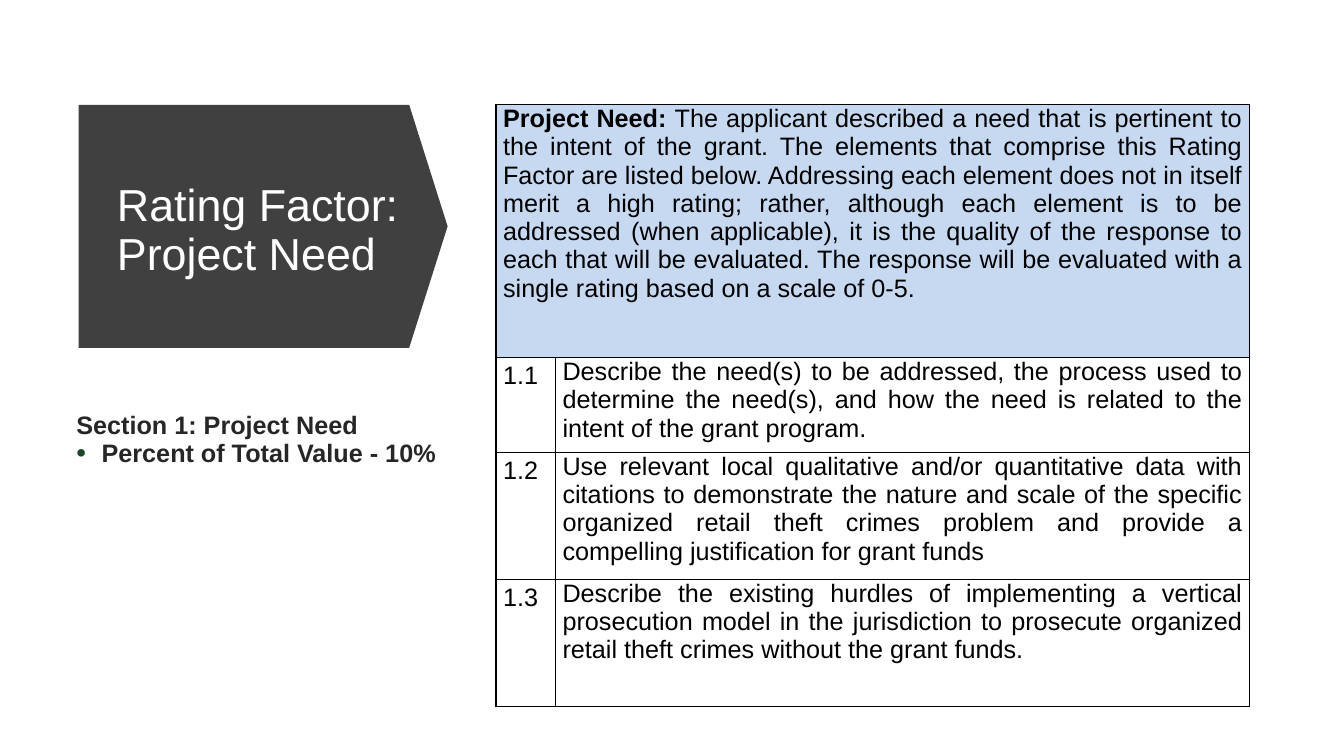
from dataclasses import dataclass

from lxml.etree import SubElement
from pptx import Presentation
from pptx.dml.color import RGBColor
from pptx.enum.shapes import MSO_SHAPE
from pptx.enum.text import MSO_ANCHOR, MSO_AUTO_SIZE, PP_ALIGN
from pptx.oxml.ns import qn
from pptx.util import Inches, Pt


@dataclass(frozen=True)
class Theme:
    font: str = "Arial"
    heading_size: int = 32
    body_size: int = 18
    banner: str = "404040"
    heading: str = "FFFFFF"
    section: str = "262626"
    bullet: str = "1F442A"
    intro_fill: str = "C6D9F1"
    ink: str = "000000"
    border_width: int = 1


THEME = Theme()

INTRO = [
    ("Project Need: ", True),
    ("The applicant described a need that is pertinent to the intent of the grant. "
     "The elements that comprise this Rating Factor are listed below. Addressing each "
     "element does not in itself merit a high rating; rather, although each element is "
     "to be addressed (when applicable), it is the quality of the response to each that "
     "will be evaluated. The response will be evaluated with a single rating based on a "
     "scale of 0-5.", False),
]
ELEMENTS = [
    ("1.1", "Describe the need(s) to be addressed, the process used to determine the "
            "need(s), and how the need is related to the intent of the grant program."),
    ("1.2", "Use relevant local qualitative and/or quantitative data with citations to "
            "demonstrate the nature and scale of the specific organized retail theft "
            "crimes problem and provide a compelling justification for grant funds"),
    ("1.3", "Describe the existing hurdles of implementing a vertical prosecution model "
            "in the jurisdiction to prosecute organized retail theft crimes without the "
            "grant funds."),
]


def apply(target, formats):
    for name, value in formats.items():
        setattr(target, name, value)


def place(shape, box):
    apply(shape, dict(zip(("left", "top", "width", "height"), map(Inches, box))))


def style(run, size, color, bold=False):
    apply(run.font, {"name": THEME.font, "size": Pt(size), "bold": bold})
    run.font.color.rgb = RGBColor.from_string(color)


def write(paragraph, pieces, size, color, **formats):
    for words, bold in pieces:
        run = paragraph.add_run()
        run.text = words
        style(run, size, color, bold)
    apply(paragraph, formats)


def add_bullet(paragraph, indent):
    properties = paragraph._p.get_or_add_pPr()
    properties.set("marL", str(Inches(indent)))
    properties.set("indent", str(-Inches(indent)))
    color = SubElement(properties, qn("a:buClr"))
    SubElement(color, qn("a:srgbClr"), val=THEME.bullet)
    SubElement(properties, qn("a:buSzPct"), val="110000")
    SubElement(properties, qn("a:buFont"), typeface=THEME.font)
    SubElement(properties, qn("a:buChar"), char="•")


def add_borders(cell):
    properties = cell._tc.get_or_add_tcPr()
    for position, side in enumerate(("a:lnL", "a:lnR", "a:lnT", "a:lnB")):
        line = SubElement(properties, qn(side), w=str(Pt(THEME.border_width)))
        fill = SubElement(line, qn("a:solidFill"))
        SubElement(fill, qn("a:srgbClr"), val=THEME.ink)
        properties.insert(position, line)


def build_banner(slide, box):
    left, top, width, height = box
    arrow = slide.shapes.add_shape(MSO_SHAPE.DOWN_ARROW, 0, 0, 0, 0)
    place(arrow, (left + (width - height) / 2, top + (height - width) / 2, height, width))
    arrow.rotation = 270
    arrow.adjustments[0], arrow.adjustments[1] = 1, 0.158
    arrow.shadow.inherit = False
    arrow.fill.solid()
    arrow.fill.fore_color.rgb = RGBColor.from_string(THEME.banner)
    arrow.line.fill.background()

    title = slide.shapes.title
    place(title, (left + 0.28, top + 0.28, width - 0.59, height - 0.46))
    slide.shapes._spTree.append(title._element)
    frame = title.text_frame
    frame.text = "Rating Factor:\vProject Need"
    apply(frame, {"word_wrap": True, "auto_size": MSO_AUTO_SIZE.NONE,
                  "vertical_anchor": MSO_ANCHOR.MIDDLE})
    heading = frame.paragraphs[0]
    apply(heading, {"alignment": PP_ALIGN.LEFT, "line_spacing": 0.9})
    for run in heading.runs:
        style(run, THEME.heading_size, THEME.heading)


def build_section(slide, box):
    section = slide.shapes.add_textbox(*map(Inches, box))
    frame = section.text_frame
    frame.word_wrap = True
    weight = frame.add_paragraph()
    add_bullet(weight, 0.25)
    for paragraph, words in ((frame.paragraphs[0], "Section 1: Project Need"),
                             (weight, "Percent of Total Value - 10%")):
        write(paragraph, [(words, True)], THEME.body_size, THEME.section, line_spacing=0.9)


def build_criteria(slide, box, column_shares, row_shares):
    _, _, width, height = box
    criteria = slide.shapes.add_table(
        len(row_shares), len(column_shares), *map(Inches, box)).table
    apply(criteria, {"first_row": False, "horz_banding": False})
    for column, share in zip(criteria.columns, column_shares):
        column.width = Inches(width * share / sum(column_shares))
    for row, share in zip(criteria.rows, row_shares):
        row.height = Inches(height * share / sum(row_shares))

    for cell in criteria.iter_cells():
        apply(cell, {"margin_left": Inches(0.07), "margin_right": Inches(0.07),
                     "margin_top": 0, "margin_bottom": 0})
        cell.fill.background()
        add_borders(cell)

    intro = criteria.cell(0, 0)
    intro.merge(criteria.cell(0, 1))
    intro.fill.solid()
    intro.fill.fore_color.rgb = RGBColor.from_string(THEME.intro_fill)
    write(intro.text_frame.paragraphs[0], INTRO, THEME.body_size, THEME.ink,
          alignment=PP_ALIGN.JUSTIFY)
    for row, (number, element) in enumerate(ELEMENTS, 1):
        write(criteria.cell(row, 0).text_frame.paragraphs[0], [(number, False)],
              THEME.body_size, THEME.ink, line_spacing=1.15, space_after=Pt(10))
        write(criteria.cell(row, 1).text_frame.paragraphs[0], [(element, False)],
              THEME.body_size, THEME.ink, alignment=PP_ALIGN.JUSTIFY)


def main():
    deck = Presentation()
    apply(deck, {"slide_width": Inches(13.33), "slide_height": Inches(7.5)})
    slide = deck.slides.add_slide(deck.slide_layouts[5])
    build_banner(slide, (0.78, 1.04, 3.66, 2.41))
    build_section(slide, (0.66, 4.05, 4.07, 0.95))
    build_criteria(slide, (4.92, 1.04, 7.47, 5.97), (0.59, 6.88), (2.51, 0.94, 1.26, 1.26))
    deck.save("out.pptx")


if __name__ == "__main__":
    main()
